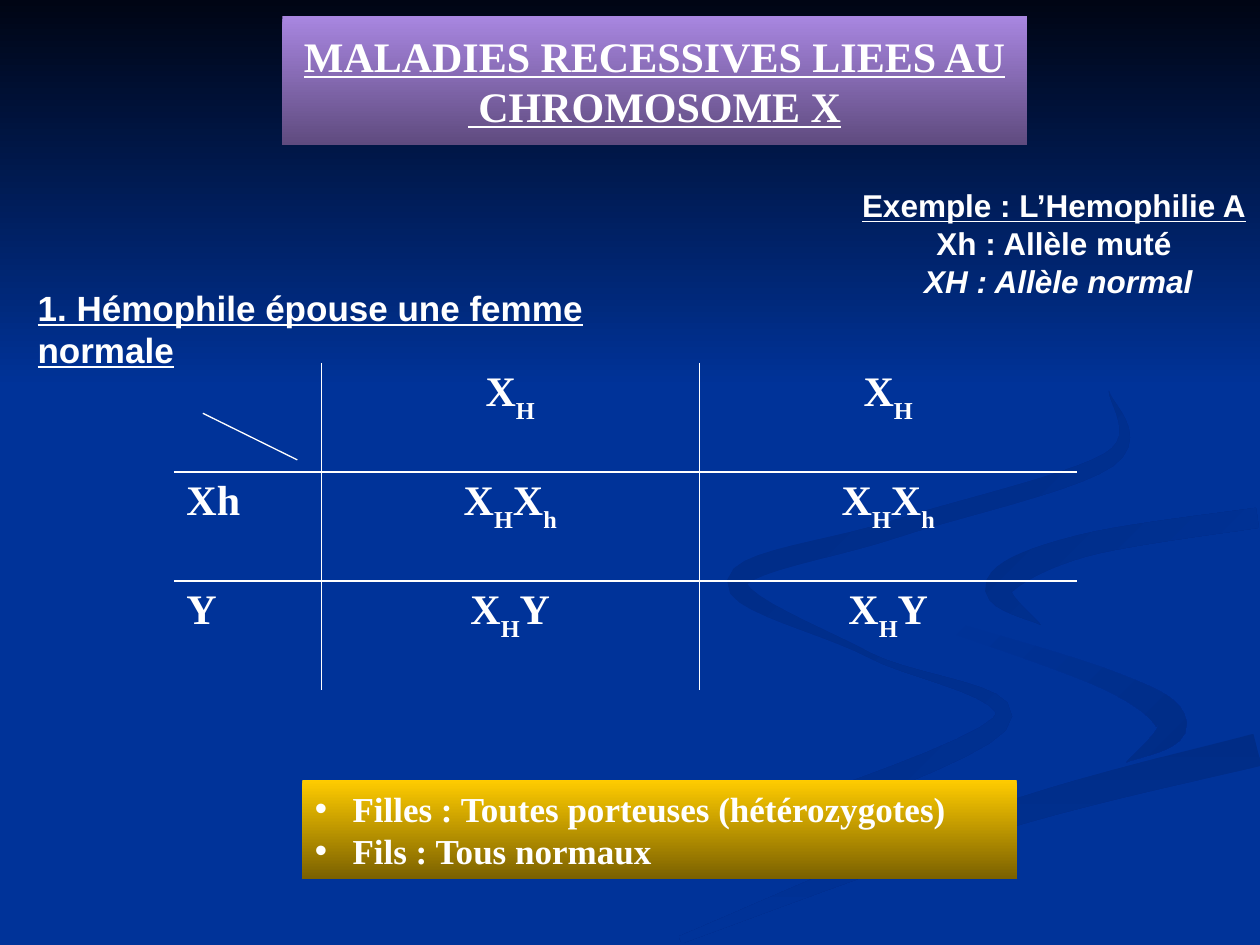
from dataclasses import dataclass
from math import hypot

from lxml import etree
from pptx import Presentation, util as u
from pptx.dml.color import RGBColor
from pptx.enum import shapes, text
from pptx.oxml.ns import qn


@dataclass(frozen=True)
class Theme:
    white: str = "FFFFFF"
    blue: str = "003399"
    night: tuple = ("000514", "003399")
    rise: tuple = ("002C86", "003399")
    dusk: tuple = ("002C86", "003193")
    fade: tuple = ("003399", "002C86")
    mauve: tuple = ("A886E0", "5F4B7F")
    gold: tuple = ("FFCC00", "7A6000")
    serif: str = "Times New Roman"
    sans: str = "Arial"
    big: int = 24
    mid: int = 20
    small: int = 18


@dataclass(frozen=True)
class Ribbon:
    """A curved band: each knot is x, y and half the width there."""
    ends: tuple
    angle: int
    knots: tuple


T = Theme()

RIBBONS = (
    Ribbon(T.dusk, 45, (
        (8.8, 3.1, 0), (8.8, 3.65, 0.06), (7.1, 4.2, 0.07), (5.85, 4.62, 0.08),
        (6.9, 5.2, 0.02), (7.93, 5.75, 0.07), (5.5, 6.75, 0.1))),
    Ribbon(T.rise, 45, (
        (9.98, 4.11, 0.08), (8.6, 4.33, 0.09), (7.93, 4.65, 0.11), (8.26, 4.96, 0))),
    Ribbon(T.fade, 45, (
        (7.4, 4.93, 0.04), (8.8, 5.4, 0.08), (9.3, 5.75, 0.12), (8.94, 6.05, 0))),
    Ribbon(T.rise, 90, ((9.98, 5.95, 0.13), (7.9, 6.5, 0.1), (5.4, 7.46, 0.03))),
)

# An underscore lowers the letter that follows it.
CROSS = (
    ("", "X_H", "X_H"),
    ("Xh", "X_HX_h", "X_HX_h"),
    ("Y", "X_HY", "X_HY"),
)


def rgb(code: str) -> RGBColor:
    return RGBColor.from_string(code)


def blend(shape, ends: tuple, angle: int) -> None:
    """Fill with two colours; the angle runs clockwise."""
    shape.fill.gradient()
    shape.fill.gradient_angle = -angle % 360
    for stop, code, place in zip(shape.fill.gradient_stops, ends, (0, 1)):
        stop.color.rgb = rgb(code)
        stop.position = place


def plain(shape) -> None:
    shape.shadow.inherit = False
    shape.line.fill.background()


def block(slide, spot: tuple, ends: tuple):
    box = slide.shapes.add_shape(shapes.MSO_SHAPE.RECTANGLE, *map(u.Inches, spot))
    plain(box)
    blend(box, ends, 90)
    return box


def style(font, face: str, size: int, line: bool = False) -> None:
    font.name, font.size = face, u.Pt(size)
    font.bold, font.underline = True, line
    font.color.rgb = rgb(T.white)


def smooth(knots: tuple, steps: int = 10) -> list:
    """Return points on a Catmull-Rom curve through the knots."""
    full = (knots[0], *knots, knots[-1])
    dots = []
    for quad in zip(full, full[1:], full[2:], full[3:]):
        for step in range(steps):
            t = step / steps
            dots.append(tuple(
                b + t * (c - a + t * (2 * a - 5 * b + 4 * c - d + t * (3 * (b - c) + d - a))) / 2
                for a, b, c, d in zip(*quad)))
    return dots + [knots[-1]]


def swirl(slide, item: Ribbon) -> None:
    dots = smooth(item.knots)
    near, far = [], []
    for back, (x, y, half), ahead in zip(dots[:1] + dots, dots, dots[1:] + dots[-1:]):
        dx, dy = ahead[0] - back[0], ahead[1] - back[1]
        scale = half / hypot(dx, dy)
        near.append((u.Inches(x - dy * scale), u.Inches(y + dx * scale)))
        far.append((u.Inches(x + dy * scale), u.Inches(y - dx * scale)))
    rim = near + far[::-1]
    pen = slide.shapes.build_freeform(*rim[0])
    pen.add_line_segments(rim[1:], close=True)
    shape = pen.convert_to_shape()
    plain(shape)
    blend(shape, item.ends, item.angle)


def title(slide) -> None:
    head = slide.shapes.title
    head.left, head.top = u.Inches(2.24), u.Inches(0.13)
    head.width, head.height = u.Inches(5.91), u.Inches(1.02)
    blend(head, T.mauve, 90)
    frame = head.text_frame
    frame.text = "MALADIES RECESSIVES LIEES AU\v CHROMOSOME X"
    frame.auto_size = text.MSO_AUTO_SIZE.NONE
    frame.vertical_anchor = text.MSO_ANCHOR.MIDDLE
    para = frame.paragraphs[0]
    para.alignment = text.PP_ALIGN.CENTER
    for run in para.runs:
        style(run.font, T.serif, T.big, True)
    # Bring the title in front of the backdrop.
    slide.shapes._spTree.append(head._element)


def label(slide, spot: tuple, lines: str, size: int, side, wrap: bool) -> list:
    """Add a text box whose first line is underlined; return its paragraphs."""
    frame = slide.shapes.add_textbox(*map(u.Inches, spot)).text_frame
    frame.text = lines
    frame.word_wrap = wrap
    frame.margin_top, frame.margin_bottom = u.Inches(0.17), u.Inches(0.04)
    for row, para in enumerate(frame.paragraphs):
        para.alignment = side
        style(para.runs[0].font, T.sans, size, row == 0)
    return frame.paragraphs


def edge(cell, tag: str, drawn: bool) -> None:
    line = etree.SubElement(cell._tc.get_or_add_tcPr(), qn(f"a:{tag}"), w=str(u.Pt(1)))
    if drawn:
        fill = etree.SubElement(line, qn("a:solidFill"))
        etree.SubElement(fill, qn("a:srgbClr"), val=T.white)
    else:
        etree.SubElement(line, qn("a:noFill"))


def write(para, code: str) -> None:
    head, *tail = code.split("_")
    parts = [(head, False)]
    for part in tail:
        parts += [(part[0], True), (part[1:], False)]
    for words, low in parts:
        if words:
            run = para.add_run()
            run.text = words
            style(run.font, T.serif, T.big)
            if low:
                run.font._element.set("baseline", "-30000")


def cross(slide) -> None:
    spot = map(u.Inches, (1.38, 2.88, 7.17, 2.6))
    grid = slide.shapes.add_table(3, 3, *spot).table
    grid.first_row = grid.horz_banding = False
    for col, wide in zip(grid.columns, (1.17, 3, 3)):
        col.width = u.Inches(wide)
    for r, row in enumerate(CROSS):
        for c, code in enumerate(row):
            cell = grid.cell(r, c)
            for tag, drawn in (("lnL", c > 0), ("lnR", c < 2), ("lnT", r > 0), ("lnB", r < 2)):
                edge(cell, tag, drawn)
            cell.fill.background()
            para = cell.text_frame.paragraphs[0]
            para.alignment = text.PP_ALIGN.CENTER if c else text.PP_ALIGN.LEFT
            write(para, code)


def slash(slide) -> None:
    ends = map(u.Inches, (2.36, 3.65, 1.61, 3.28))
    line = slide.shapes.add_connector(shapes.MSO_CONNECTOR.STRAIGHT, *ends)
    line.line.color.rgb, line.line.width = rgb(T.white), u.Pt(0.75)
    etree.SubElement(line._element.spPr, qn("a:effectLst"))


def result(slide) -> None:
    frame = block(slide, (2.4, 6.19, 5.67, 0.79), T.gold).text_frame
    frame.text = "Filles : Toutes porteuses (hétérozygotes)\nFils : Tous normaux"
    for para in frame.paragraphs:
        para.alignment = text.PP_ALIGN.LEFT
        props = para._p.get_or_add_pPr()
        props.set("marL", str(u.Inches(0.3)))
        props.set("indent", str(u.Inches(-0.3)))
        etree.SubElement(props, qn("a:buFont"), typeface=T.sans)
        etree.SubElement(props, qn("a:buChar"), char="•")
        style(para.runs[0].font, T.serif, T.mid)


def main() -> None:
    deck = Presentation()
    deck.slide_width, deck.slide_height = u.Inches(10), u.Inches(7.5)
    slide = deck.slides.add_slide(deck.slide_layouts[5])
    slide.background.fill.solid()
    slide.background.fill.fore_color.rgb = rgb(T.blue)
    for item in RIBBONS:
        swirl(slide, item)
    block(slide, (0, 0, 10, 3.08), T.night)
    title(slide)
    key = label(slide, (6.73, 1.31, 3.27, 1.41),
                "Exemple : L’Hemophilie A\nXh : Allèle muté\n XH : Allèle normal",
                T.small, text.PP_ALIGN.CENTER, False)
    key[-1].runs[0].font.italic = True
    label(slide, (0.2, 2.1, 5.68, 0.88), "1. Hémophile épouse une femme normale",
          T.mid, text.PP_ALIGN.LEFT, True)
    slash(slide)
    cross(slide)
    result(slide)
    deck.save("out.pptx")


if __name__ == "__main__":
    main()
